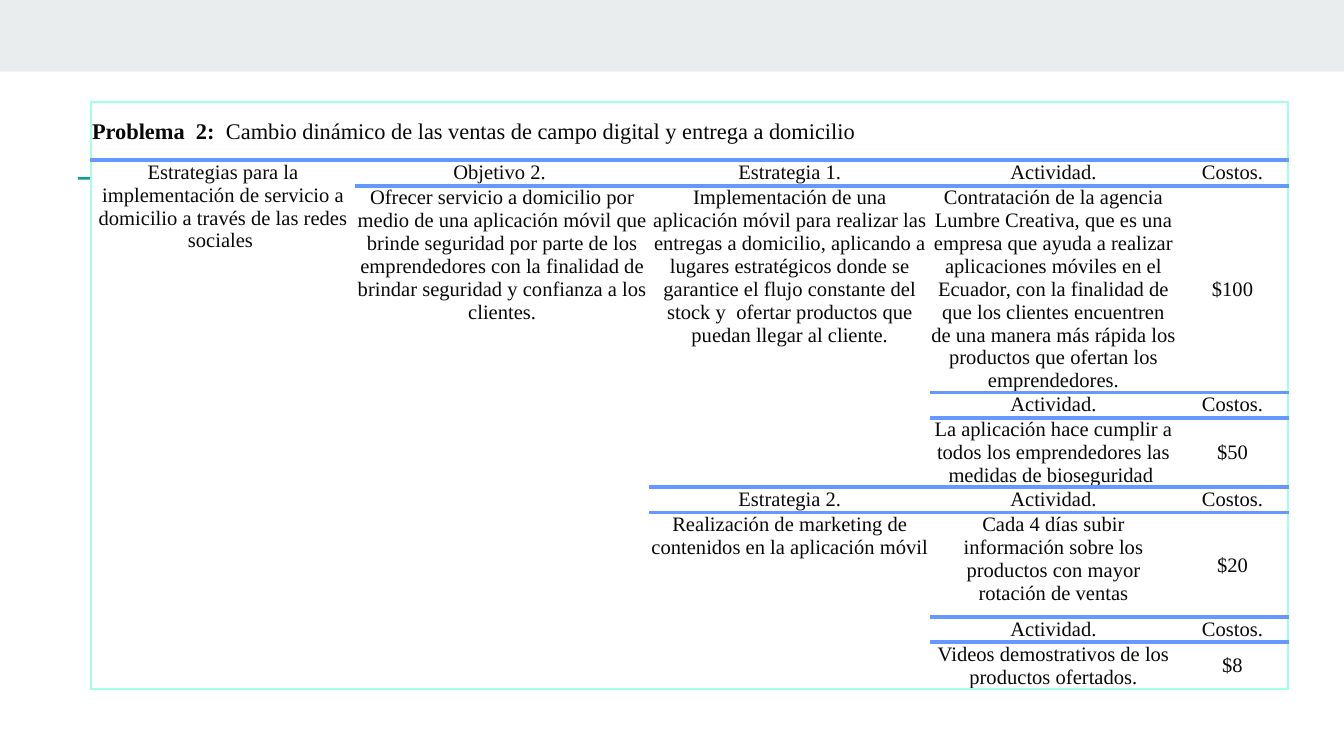
from lxml import etree
from pptx import Presentation
from pptx.dml.color import RGBColor
from pptx.enum.shapes import MSO_SHAPE as Shape
from pptx.enum.text import MSO_ANCHOR as Anchor, PP_ALIGN as Align
from pptx.oxml.ns import qn
from pptx.util import Pt

FONT = "Times New Roman"
INK, WHITE, BAND, TEAL = "080808", "FFFFFF", "E9EDEE", "1A9988"
RULE = ("6699FF", 2.25)
FRAME = ("A2FFE8", 1)
COLUMNS = [141.4, 157.7, 150.5, 132, 59.8]
ROWS = [31.1, 13.7, 110.4, 13.6, 37.1, 13.6, 56, 13.4, 25.2]

# (row, column, rows spanned, text)
BODY = [
    (1, 0, 8, "Estrategias para la implementación de servicio a domicilio a través de las redes sociales "),
    (1, 1, 1, "Objetivo 2. "),
    (2, 1, 7, "Ofrecer servicio a domicilio por medio de una aplicación móvil que brinde seguridad "
              "por parte de los emprendedores con la finalidad de brindar seguridad y confianza a los clientes."),
    (1, 2, 1, "Estrategia 1."),
    (2, 2, 3, "Implementación de una aplicación móvil para realizar las entregas a domicilio, aplicando "
              "a lugares estratégicos donde se garantice el flujo constante del stock y  ofertar productos "
              "que puedan llegar al cliente."),
    (5, 2, 1, "Estrategia 2."),
    (6, 2, 3, "Realización de marketing de contenidos en la aplicación móvil "),
]
ACTIVITIES = [
    ("Contratación de la agencia Lumbre Creativa, que es una empresa que ayuda a realizar aplicaciones "
     "móviles en el Ecuador, con la finalidad de que los clientes encuentren de una manera más rápida "
     "los productos que ofertan los emprendedores.", "$100"),
    ("La aplicación hace cumplir a todos los emprendedores las medidas de bioseguridad ", "$50"),
    ("Cada 4 días subir información sobre los productos con mayor rotación de ventas", "$20"),
    ("Videos demostrativos de los productos ofertados.", "$8"),
]


def colour(value):
    return RGBColor.from_string(value)


def add_bar(page, box, fill):
    bar = page.shapes.add_shape(Shape.RECTANGLE, *map(Pt, box))
    bar.shadow.inherit = False
    bar.fill.solid()
    bar.fill.fore_color.rgb = colour(fill)
    bar.line.fill.background()


def set_borders(cell, lines):
    """Set left, right, top and bottom lines; None means no line."""
    properties = cell._tc.get_or_add_tcPr()
    for index, (side, line) in enumerate(zip("LRTB", lines)):
        border = etree.Element(qn(f"a:ln{side}"))
        if line:
            border.set("w", str(Pt(line[1])))
            fill = etree.SubElement(border, qn("a:solidFill"))
            etree.SubElement(fill, qn("a:srgbClr")).set("val", line[0])
        else:
            etree.SubElement(border, qn("a:noFill"))
        properties.insert(index, border)


def style_region(table, top, left, height, width):
    """Fill and outline one cell or merged block: frame colour outside, rules inside."""
    bottom, right = top + height - 1, left + width - 1
    for row in range(top, bottom + 1):
        for column in range(left, right + 1):
            cell = table.cell(row, column)
            cell.fill.solid()
            cell.fill.fore_color.rgb = colour(WHITE)
            for name, value in {"left": 0.5, "right": 0.5, "top": 0.5, "bottom": 0}.items():
                setattr(cell, f"margin_{name}", Pt(value))
            origin = (row, column) == (top, left)
            set_borders(cell, [
                FRAME if column == 0 else None,
                FRAME if right == len(COLUMNS) - 1 and (origin or column == right) else None,
                (RULE if top else FRAME) if row == top else None,
                (RULE if bottom < len(ROWS) - 1 else FRAME) if origin or row == bottom else None,
            ])
    if height * width > 1:
        table.cell(top, left).merge(table.cell(bottom, right))


def write_cell(cell, runs, size, align, anchor):
    cell.vertical_anchor = anchor
    para = cell.text_frame.paragraphs[0]
    para.alignment = align
    for text, bold in runs:
        span = para.add_run()
        span.text = text
        for name, value in {"name": FONT, "size": Pt(size), "bold": bold}.items():
            setattr(span.font, name, value)
        span.font.color.rgb = colour(INK)


def add_strategy_table(page, left, top):
    box = map(Pt, (left, top, sum(COLUMNS), sum(ROWS)))
    table = page.shapes.add_table(len(ROWS), len(COLUMNS), *box).table
    table.first_row = table.horz_banding = False
    for column, width in zip(table.columns, COLUMNS):
        column.width = Pt(width)
    for row, height in zip(table.rows, ROWS):
        row.height = Pt(height)

    style_region(table, 0, 0, 1, len(COLUMNS))
    title = [("Problema  2:  ", True),
             ("Cambio dinámico de las ventas de campo digital y entrega a domicilio", False)]
    write_cell(table.cell(0, 0), title, 12, Align.LEFT, Anchor.MIDDLE)

    entries = list(BODY)
    for index, (activity, cost) in enumerate(ACTIVITIES):
        row = 1 + 2 * index
        entries += [(row, 3, 1, "Actividad."), (row, 4, 1, "Costos."),
                    (row + 1, 3, 1, activity), (row + 1, 4, 1, cost)]
    for row, column, height, text in entries:
        style_region(table, row, column, height, 1)
        anchor = Anchor.MIDDLE if text.startswith("$") else Anchor.TOP
        write_cell(table.cell(row, column), [(text, False)], 11, Align.CENTER, anchor)


def main():
    deck = Presentation()
    deck.slide_width, deck.slide_height = Pt(720), Pt(405)
    page = deck.slides.add_slide(deck.slide_layouts[6])
    add_bar(page, (0, 0, 720, 38.4), BAND)
    add_bar(page, (41.8, 94.7, 53.2, 1.5), TEAL)
    add_strategy_table(page, 48.8, 54.7)
    deck.save("out.pptx")


if __name__ == "__main__":
    main()
